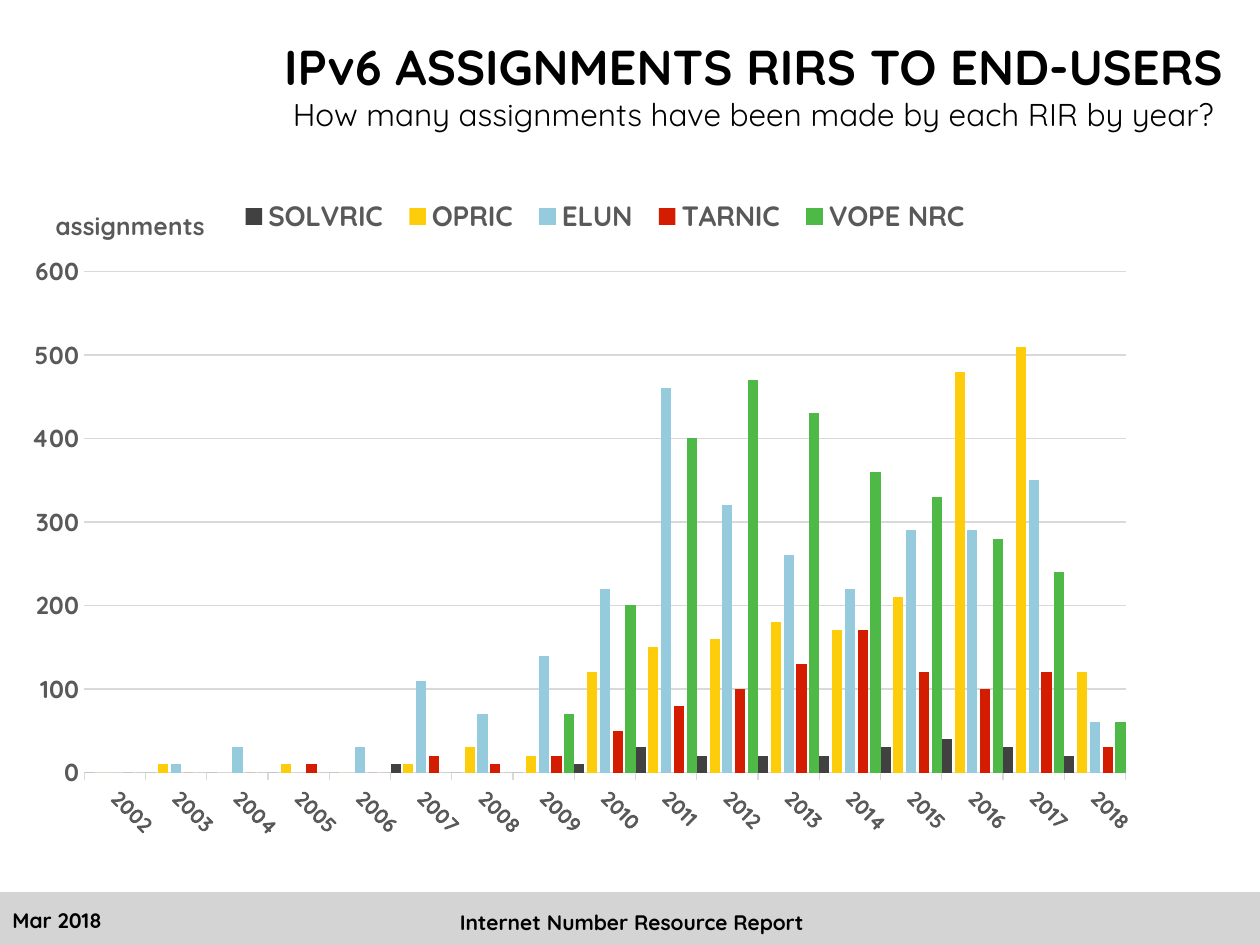
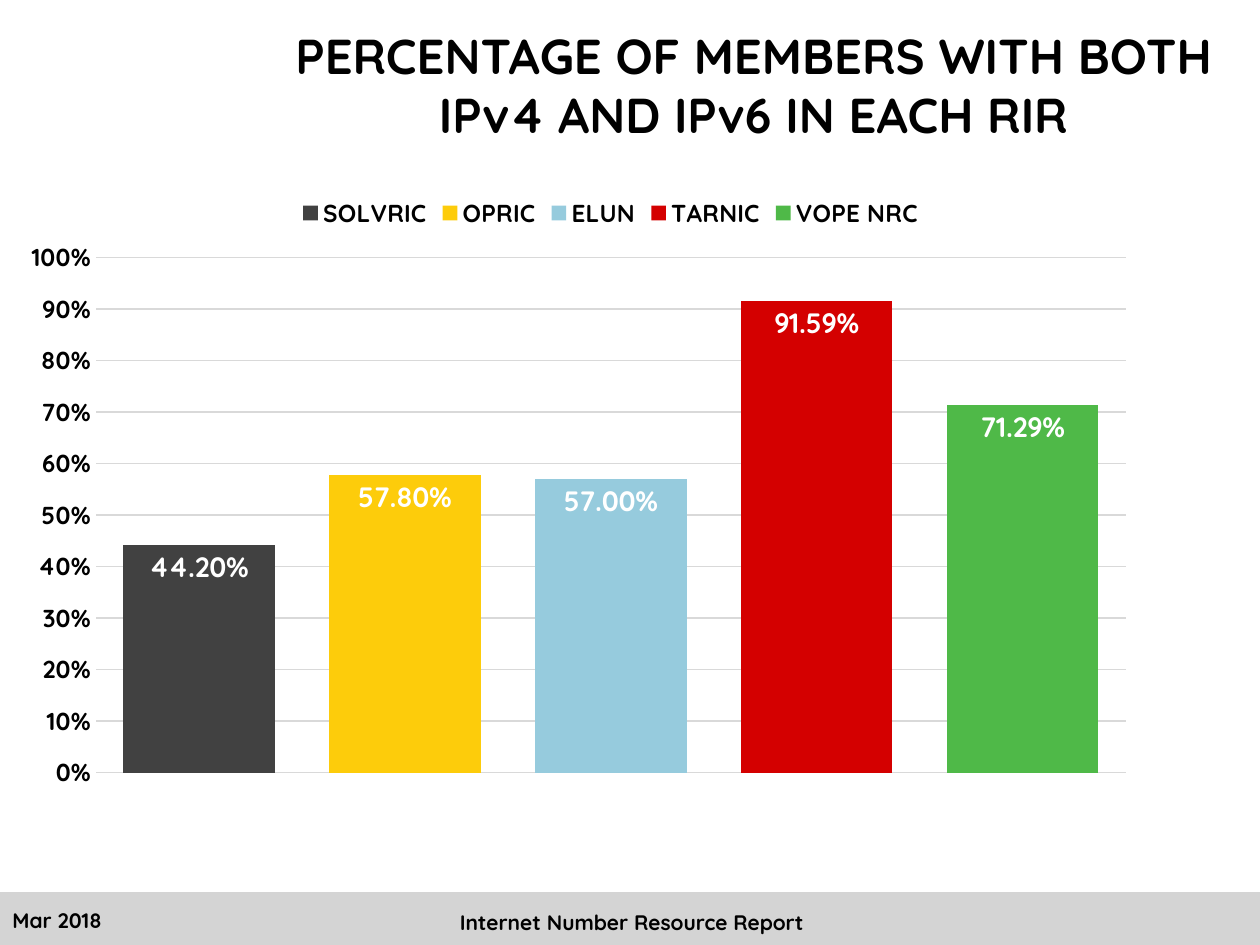
from lxml.etree import SubElement
from pptx import Presentation
from pptx.chart.data import CategoryChartData
from pptx.dml.color import RGBColor
from pptx.enum.chart import XL_CHART_TYPE as CT, XL_LABEL_POSITION as LP
from pptx.enum.chart import XL_LEGEND_POSITION as LEG, XL_TICK_MARK as TICK
from pptx.enum.shapes import MSO_SHAPE
from pptx.enum.text import MSO_ANCHOR as ANCHOR, PP_ALIGN as ALIGN
from pptx.oxml.ns import qn
from pptx.util import Inches, Pt

FONT = "Quicksand"
BLACK, WHITE, GREY, RULE, BAND = "000000", "FFFFFF", "595959", "D9D9D9", "D4D4D4"
RIRS = ["SOLVRIC", "OPRIC", "ELUN", "TARNIC", "VOPE NRC"]


def rgb(value):
    return RGBColor.from_string(value)


def style(font, size, color=BLACK, bold=True):
    font.name, font.size, font.bold = FONT, Pt(size), bold
    font.color.rgb = rgb(color)


def set_layout(parent, after, x, y, w=None, h=None, inner=False):
    """Place a chart part by fractions of the chart area."""
    for old in parent.findall(qn("c:layout")):
        parent.remove(old)
    layout = SubElement(parent, qn("c:layout"))
    manual = SubElement(layout, qn("c:manualLayout"))
    entries = [("layoutTarget", "inner")] if inner else []
    entries += [("xMode", "edge"), ("yMode", "edge"), ("x", x), ("y", y)]
    if w:
        entries += [("w", w), ("h", h)]
    for name, value in entries:
        SubElement(manual, qn("c:" + name)).set("val", str(value))
    if after is None:
        parent.insert(0, layout)
    else:
        after.addnext(layout)


class Deck:
    def __init__(self):
        self.prs = Presentation()
        self.prs.slide_width, self.prs.slide_height = Inches(10), Inches(7.5)
        self.s = None

    def slide(self, title, subtitle=None):
        self.s = self.prs.slides.add_slide(self.prs.slide_layouts[5])
        self.band()
        self.title(title, subtitle)

    def band(self):
        sp = self.s.shapes.add_shape(MSO_SHAPE.RECTANGLE, Inches(0), Inches(7.08),
                                     Inches(10), Inches(0.42))
        sp.shadow.inherit = False
        sp.fill.solid()
        sp.fill.fore_color.rgb = rgb(BAND)
        sp.line.fill.background()

    def title(self, title, subtitle):
        sp = self.s.shapes.title
        sp.left, sp.top = Inches(1.96), Inches(0)
        sp.width, sp.height = Inches(8.04), Inches(1.34)
        tf = sp.text_frame
        tf.vertical_anchor = ANCHOR.MIDDLE
        p = tf.paragraphs[0]
        p.text = f"{title}\v{subtitle}" if subtitle else title
        p.alignment = ALIGN.CENTER
        style(p.runs[0].font, 28)
        for r in p.runs[1:]:
            style(r.font, 18, bold=False)

    def text(self, text, x, y, w, h, align=ALIGN.LEFT, anchor=ANCHOR.TOP):
        sp = self.s.shapes.add_textbox(Inches(x), Inches(y), Inches(w), Inches(h))
        tf = sp.text_frame
        tf.word_wrap, tf.vertical_anchor = True, anchor
        tf.text = text
        p = tf.paragraphs[0]
        p.alignment = align
        style(p.runs[0].font, 12)

    def footer(self):
        self.text("Internet Number Resource Report", 2.95, 7.17, 4.13, 0.25, ALIGN.CENTER)
        self.text("Mar 2018", 0, 7.1, 2.25, 0.4, anchor=ANCHOR.MIDDLE)

    def columns(self, cats, series, top, step, fmt, color, gap, plot, legend, legend_size):
        data = CategoryChartData()
        data.categories = cats
        for name, values in series.items():
            data.add_series(name, values)
        chart = self.s.shapes.add_chart(CT.COLUMN_CLUSTERED, Inches(0.25), Inches(1.5),
                                        Inches(8.86), Inches(5.45), data).chart
        chart.has_title = False
        style(chart.font, 10)
        bars = chart.plots[0]
        bars.gap_width, bars.overlap = gap, -27
        bars.vary_by_categories = len(series) == 1
        set_layout(chart._chartSpace.find(".//" + qn("c:plotArea")), None, *plot, inner=True)

        # Value axis
        axis = chart.value_axis
        axis.minimum_scale, axis.maximum_scale, axis.major_unit = 0, top, step
        axis.major_tick_mark = axis.minor_tick_mark = TICK.NONE
        axis.format.line.fill.background()
        grid = axis.major_gridlines.format.line
        grid.color.rgb, grid.width = rgb(RULE), Pt(0.75)
        labels = axis.tick_labels
        labels.number_format, labels.number_format_is_linked = fmt, False
        style(labels.font, 14, color)

        # Legend
        chart.has_legend = True
        chart.legend.position = LEG.BOTTOM
        chart.legend.include_in_layout = False
        style(chart.legend.font, legend_size, color)
        box = chart.legend._element
        set_layout(box, box.find(qn("c:legendPos")), *legend)
        return chart

    def color_bars(self, bars):
        for bar, color in bars:
            bar.format.fill.solid()
            bar.format.fill.fore_color.rgb = rgb(color)

    def year_axis(self, axis):
        axis.major_tick_mark = TICK.OUTSIDE
        axis.format.line.color.rgb, axis.format.line.width = rgb(RULE), Pt(0.75)
        style(axis.tick_labels.font, 12, GREY)
        body = axis._element.find(qn("c:txPr")).find(qn("a:bodyPr"))
        body.set("rot", "2700000")
        body.set("vert", "horz")

    def axis_title(self, axis, text, x, y):
        tf = axis.axis_title.text_frame
        tf.text = text
        style(tf.paragraphs[0].runs[0].font, 14, GREY)
        tf._txBody.find(qn("a:bodyPr")).set("rot", "0")
        title = axis.axis_title._element
        set_layout(title, title.find(qn("c:tx")), x, y)


def assignments_slide(deck):
    deck.slide("IPv6 ASSIGNMENTS RIRS TO END-USERS",
               "How many assignments have been made by each RIR by year?")
    yearly = [
        [0, 0, 0, 0, 0, 10, 0, 0, 10, 30, 20, 20, 20, 30, 40, 30, 20],
        [0, 10, 0, 10, 0, 10, 30, 20, 120, 150, 160, 180, 170, 210, 480, 510, 120],
        [0, 10, 30, 0, 30, 110, 70, 140, 220, 460, 320, 260, 220, 290, 290, 350, 60],
        [0, 0, 0, 10, 0, 20, 10, 20, 50, 80, 100, 130, 170, 120, 100, 120, 30],
        [0, 0, 0, 0, 0, 0, 0, 70, 200, 400, 470, 430, 360, 330, 280, 240, 60],
    ]
    years = [str(year) for year in range(2002, 2019)]
    chart = deck.columns(years, dict(zip(RIRS, yearly)), 600, 100, "0", GREY, 0,
                         (0.04, 0.12, 0.94, 0.73), (0.17, 0.01, 0.68, 0.06), 16)
    deck.color_bars(zip(chart.plots[0].series,
                        ["414141", "FDCC0B", "96CBDD", "D41D00", "4FB948"]))
    deck.year_axis(chart.category_axis)
    deck.axis_title(chart.value_axis, "assignments", 0.01, 0.02)
    deck.footer()


def members_slide(deck):
    deck.slide("PERCENTAGE OF MEMBERS WITH BOTH IPv4 AND IPv6 IN EACH RIR")
    shares = [0.442, 0.578, 0.57, 0.9159, 0.7129]
    chart = deck.columns(RIRS, {"Series 1": shares}, 1, 0.1, "0%", BLACK, 36,
                         (0.05, 0.1, 0.93, 0.75), (0.23, 0.01, 0.57, 0.05), 14)
    chart.category_axis.visible = False
    bars = chart.plots[0].series[0]
    colors = ["414141", "FDCC0B", "96CBDD", "D40000", "4FB948"]
    deck.color_bars((bars.points[i], color) for i, color in enumerate(colors))

    # Share inside each bar
    labels = bars.data_labels
    labels.show_value, labels.position = True, LP.INSIDE_END
    labels.number_format, labels.number_format_is_linked = "0.00%", False
    style(labels.font, 16, WHITE)
    deck.footer()


def main():
    deck = Deck()
    assignments_slide(deck)
    members_slide(deck)
    deck.prs.save("out.pptx")


if __name__ == "__main__":
    main()
